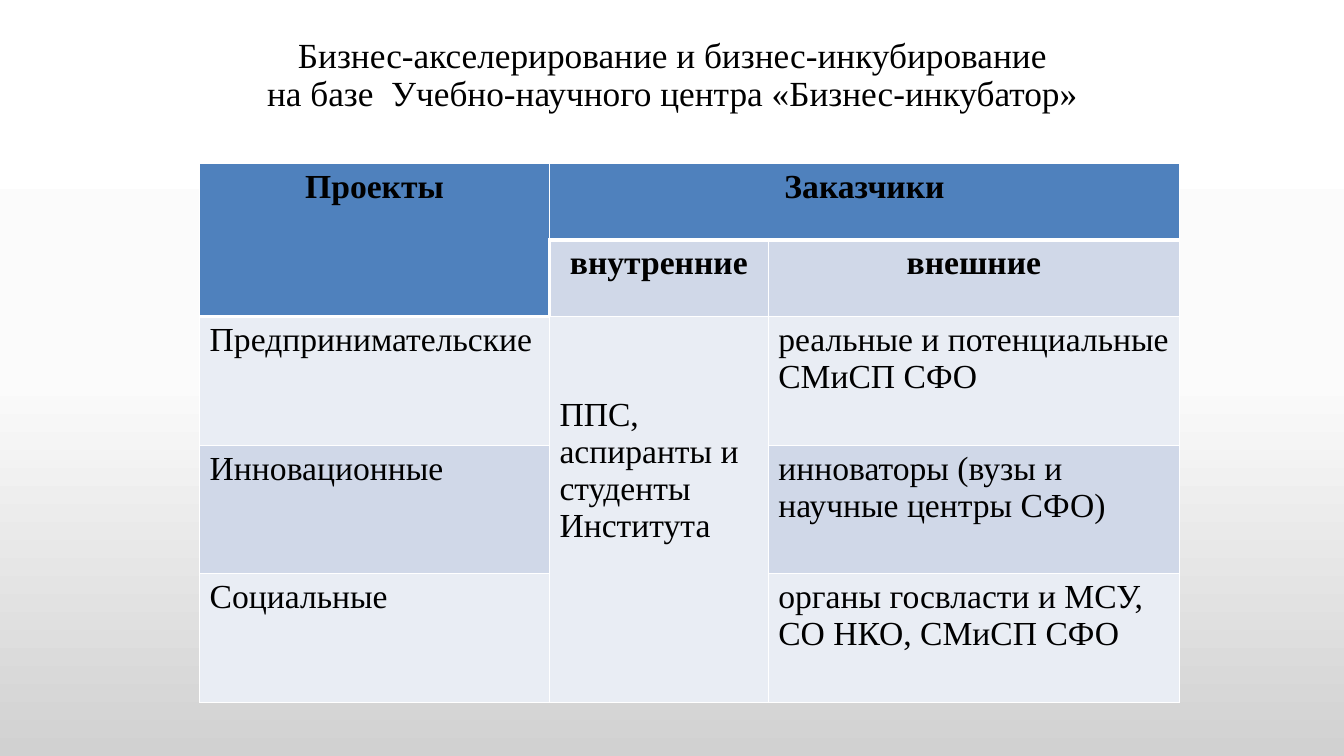
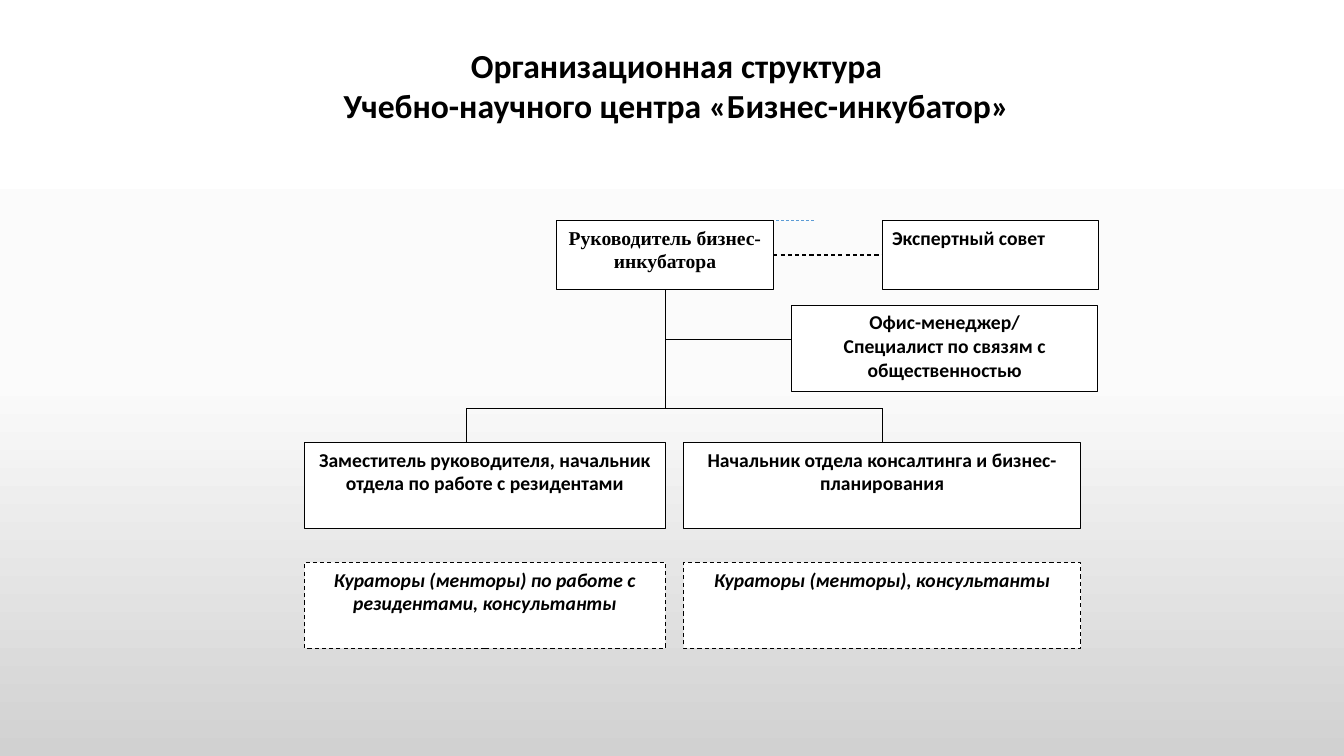
"""Build two slides on a business incubator: a table of projects and an organisation chart."""
from copy import deepcopy
from dataclasses import dataclass

from lxml.etree import SubElement
from pptx import Presentation
from pptx.dml.color import RGBColor
from pptx.enum.dml import MSO_LINE
from pptx.enum.shapes import MSO_CONNECTOR, MSO_SHAPE
from pptx.enum.text import MSO_ANCHOR, PP_ALIGN
from pptx.oxml.ns import qn
from pptx.presentation import Presentation as Deck
from pptx.slide import Slide
from pptx.table import Table
from pptx.text.text import TextFrame
from pptx.util import Inches, Pt

BLACK = RGBColor(0x00, 0x00, 0x00)
WHITE = RGBColor(0xFF, 0xFF, 0xFF)
NEAR_WHITE = RGBColor(0xFB, 0xFB, 0xFB)
GREY = RGBColor(0xD1, 0xD1, 0xD1)
HEADER_BLUE = RGBColor(0x4F, 0x81, 0xBD)
BAND_DARK = RGBColor(0xD0, 0xD8, 0xE8)
BAND_LIGHT = RGBColor(0xE9, 0xED, 0xF4)
ACCENT_BLUE = RGBColor(0x5B, 0x9B, 0xD5)
SERIF = "Times New Roman"
SANS = "Calibri"

COLUMN_WIDTHS = (3.47, 2.17, 4.08)
ROW_HEIGHTS = (0.76, 0.76, 1.28, 1.27, 1.28)


@dataclass(frozen=True)
class TextStyle:
    """Look of a block of text."""

    size: float
    face: str = SANS
    bold: bool = True
    italic: bool = False
    align: PP_ALIGN = PP_ALIGN.CENTER
    spacing: float = 1.0


@dataclass(frozen=True)
class Entry:
    """A table cell, its span and its thick borders."""

    row: int
    column: int
    text: str
    fill: RGBColor
    heading: bool = False
    rows: int = 1
    columns: int = 1
    thick: str = ""
    margin_top: float = 0.05


@dataclass(frozen=True)
class Unit:
    """A box of the organisation chart."""

    left: float
    top: float
    width: float
    height: float
    text: str
    style: TextStyle
    dashed: bool = False


@dataclass(frozen=True)
class Link:
    """A straight line between two points."""

    x1: float
    y1: float
    x2: float
    y2: float
    dashed: bool = False
    color: RGBColor = BLACK
    weight: float = 0.75


ROLE = TextStyle(14)
LEFT_ROLE = TextStyle(14, align=PP_ALIGN.LEFT)
SERIF_ROLE = TextStyle(14, SERIF)
MENTORS = TextStyle(14, italic=True)
HEADING = TextStyle(24, SERIF)
BODY = TextStyle(24, SERIF, bold=False, align=PP_ALIGN.LEFT)

ENTRIES = (
    Entry(0, 0, "Проекты", HEADER_BLUE, heading=True, rows=2, thick="B"),
    Entry(0, 1, "Заказчики", HEADER_BLUE, heading=True, columns=2, thick="B"),
    Entry(1, 1, "внутренние", BAND_DARK, heading=True, thick="LT"),
    Entry(1, 2, "внешние", BAND_DARK, heading=True, thick="T"),
    Entry(2, 0, "Предпринимательские", BAND_LIGHT, thick="T"),
    Entry(2, 1, "ППС, аспиранты и студенты Института", BAND_LIGHT, rows=3, margin_top=0.79),
    Entry(2, 2, "реальные и потенциальные СМиСП СФО", BAND_LIGHT),
    Entry(3, 0, "Инновационные", BAND_DARK),
    Entry(3, 2, "инноваторы (вузы и научные центры СФО)", BAND_DARK),
    Entry(4, 0, "Социальные", BAND_LIGHT),
    Entry(4, 2, "органы госвласти и МСУ, СО НКО, СМиСП СФО", BAND_LIGHT),
)

HEAD_TOP, HEAD_BOTTOM = 2.19, 2.87
HEAD_RIGHT, COUNCIL_LEFT = 7.67, 8.75
COUNCIL_Y = (HEAD_TOP + HEAD_BOTTOM) / 2
TRUNK_X, BRANCH_Y = 6.6, 4.05
DEPUTY_X, CONSULTING_X = 4.63, 8.75
DEPARTMENT_TOP, MENTOR_TOP = 4.39, 5.58
OFFICE_LEFT, OFFICE_Y = 7.85, 3.37

UNITS = (
    Unit(5.52, HEAD_TOP, 2.15, 0.68, "Руководитель бизнес-инкубатора", SERIF_ROLE),
    Unit(COUNCIL_LEFT, HEAD_TOP, 2.15, 0.68, "Экспертный совет", LEFT_ROLE),
    Unit(OFFICE_LEFT, 3.03, 3.04, 0.85,
         "Офис-менеджер/\nСпециалист по связям с общественностью", ROLE),
    Unit(3.02, DEPARTMENT_TOP, 3.58, 0.85,
         "Заместитель руководителя, начальник отдела по работе с резидентами", ROLE),
    Unit(6.78, DEPARTMENT_TOP, 3.94, 0.85,
         "Начальник отдела консалтинга и бизнес-планирования", ROLE),
    Unit(3.02, MENTOR_TOP, 3.58, 0.85,
         "Кураторы (менторы) по работе с резидентами, консультанты", MENTORS, dashed=True),
    Unit(6.78, MENTOR_TOP, 3.94, 0.85,
         "Кураторы (менторы), консультанты", MENTORS, dashed=True),
)

ACCENT_LINK = Link(8.07, HEAD_TOP, 6.43, HEAD_TOP, dashed=True, color=ACCENT_BLUE, weight=0.5)
LINKS = (
    Link(TRUNK_X, HEAD_BOTTOM, TRUNK_X, BRANCH_Y),
    Link(DEPUTY_X, BRANCH_Y, CONSULTING_X, BRANCH_Y),
    Link(DEPUTY_X, BRANCH_Y, DEPUTY_X, DEPARTMENT_TOP),
    Link(CONSULTING_X, BRANCH_Y, CONSULTING_X, DEPARTMENT_TOP),
    Link(HEAD_RIGHT, COUNCIL_Y, COUNCIL_LEFT, COUNCIL_Y, dashed=True),
    Link(TRUNK_X, OFFICE_Y, OFFICE_LEFT, OFFICE_Y),
)


def write(frame: TextFrame, text: str, style: TextStyle) -> None:
    """Fill a text frame with evenly styled paragraphs."""
    frame.word_wrap = True
    frame.text = text
    for paragraph in frame.paragraphs:
        paragraph.alignment = style.align
        paragraph.line_spacing = style.spacing
        paragraph.font.name = style.face
        paragraph.font.size = Pt(style.size)
        paragraph.font.bold = style.bold
        paragraph.font.italic = style.italic
        paragraph.font.color.rgb = BLACK


def set_background(deck: Deck) -> None:
    """Give every slide the same vertical gradient."""
    master = deck.slide_master
    fill = master.background.fill
    fill.gradient()
    fill.gradient_angle = 270
    stops = master.element.find(f".//{qn('p:bg')}//{qn('a:gsLst')}")
    stops.insert(1, deepcopy(stops[0]))
    colors = (WHITE, NEAR_WHITE, GREY)
    for stop, color, position in zip(fill.gradient_stops, colors, (0, 0.5, 1)):
        stop.color.rgb = color
        stop.position = position


def add_title(slide: Slide, left: float, top: float, width: float, height: float,
              text: str, style: TextStyle) -> None:
    """Add a slide title, centred vertically in its box."""
    title = slide.shapes.add_textbox(Inches(left), Inches(top), Inches(width), Inches(height))
    title.text_frame.vertical_anchor = MSO_ANCHOR.MIDDLE
    write(title.text_frame, text, style)


def add_entry(table: Table, entry: Entry) -> None:
    """Fill one table cell and draw its borders."""
    last_row = entry.row + entry.rows - 1
    last_column = entry.column + entry.columns - 1
    cell = table.cell(entry.row, entry.column)
    if entry.rows * entry.columns > 1:
        cell.merge(table.cell(last_row, last_column))
    write(cell.text_frame, entry.text, HEADING if entry.heading else BODY)
    cell.margin_top = Inches(entry.margin_top)
    for row in range(entry.row, last_row + 1):
        for column in range(entry.column, last_column + 1):
            part = table.cell(row, column)
            properties = part._tc.get_or_add_tcPr()
            for side in "LRTB":
                weight = Pt(3 if side in entry.thick else 1)
                border = SubElement(properties, qn(f"a:ln{side}"), w=str(weight))
                paint = SubElement(border, qn("a:solidFill"))
                SubElement(paint, qn("a:srgbClr"), val=str(WHITE))
            part.fill.solid()
            part.fill.fore_color.rgb = entry.fill


def add_unit(slide: Slide, unit: Unit) -> None:
    """Draw one box of the organisation chart."""
    box = slide.shapes.add_shape(MSO_SHAPE.RECTANGLE, Inches(unit.left), Inches(unit.top),
                                 Inches(unit.width), Inches(unit.height))
    box.shadow.inherit = False
    box.fill.solid()
    box.fill.fore_color.rgb = WHITE
    box.line.color.rgb = BLACK
    box.line.width = Pt(0.75)
    if unit.dashed:
        box.line.dash_style = MSO_LINE.DASH
    box.text_frame.vertical_anchor = MSO_ANCHOR.TOP
    write(box.text_frame, unit.text, unit.style)


def add_link(slide: Slide, link: Link) -> None:
    """Draw one line of the organisation chart."""
    connector = slide.shapes.add_connector(MSO_CONNECTOR.STRAIGHT, Inches(link.x1),
                                           Inches(link.y1), Inches(link.x2), Inches(link.y2))
    connector.line.color.rgb = link.color
    connector.line.width = Pt(link.weight)
    if link.dashed:
        connector.line.dash_style = MSO_LINE.DASH
    SubElement(connector.element.spPr, qn("a:effectLst"))


def build_projects(slide: Slide) -> None:
    """Build the table of projects and customers."""
    add_title(slide, 0.92, 0.4, 11.5, 0.71,
              "Бизнес-акселерирование и бизнес-инкубирование\v"
              "на базе  Учебно-научного центра «Бизнес-инкубатор»",
              TextStyle(25.2, SERIF, bold=False, spacing=0.9))
    table = slide.shapes.add_table(len(ROW_HEIGHTS), len(COLUMN_WIDTHS), Inches(1.98), Inches(1.62),
                                   Inches(sum(COLUMN_WIDTHS)), Inches(sum(ROW_HEIGHTS))).table
    table.first_row = table.horz_banding = False
    for column, width in zip(table.columns, COLUMN_WIDTHS):
        column.width = Inches(width)
    for row, height in zip(table.rows, ROW_HEIGHTS):
        row.height = Inches(height)
    for entry in ENTRIES:
        add_entry(table, entry)


def build_structure(slide: Slide) -> None:
    """Build the organisation chart."""
    add_title(slide, 2.06, 0.39, 9.3, 0.91,
              "Организационная структура\nУчебно-научного центра «Бизнес-инкубатор»",
              TextStyle(24))
    add_link(slide, ACCENT_LINK)
    for unit in UNITS:
        add_unit(slide, unit)
    for link in LINKS:
        add_link(slide, link)


def main() -> None:
    """Build and save the presentation."""
    deck = Presentation()
    deck.slide_width, deck.slide_height = Inches(13.33), Inches(7.5)
    set_background(deck)
    blank = deck.slide_layouts[6]
    for build in (build_projects, build_structure):
        build(deck.slides.add_slide(blank))
    deck.save("out.pptx")


if __name__ == "__main__":
    main()
